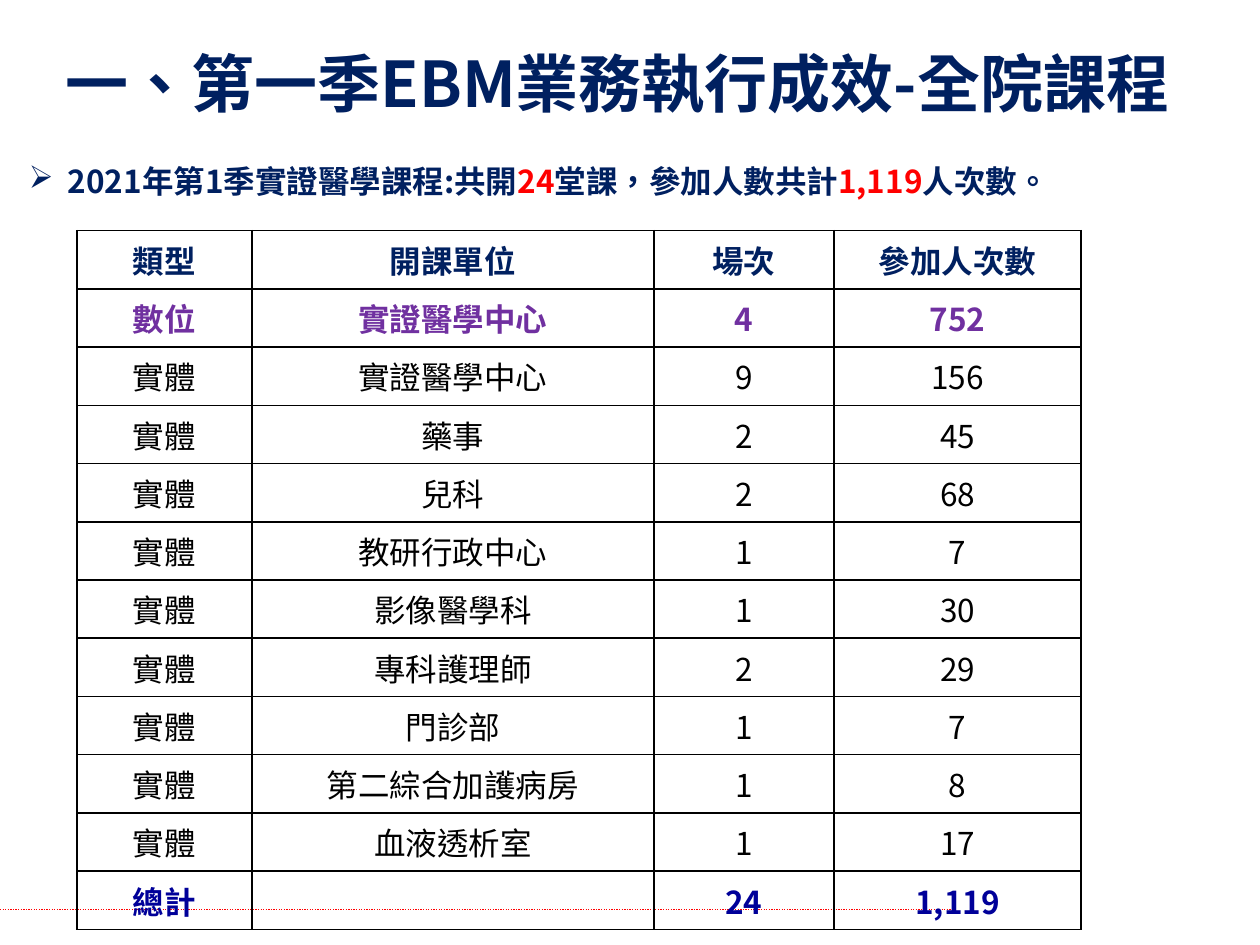
import pptx
import pptx.dml.color
import pptx.enum.dml
import pptx.enum.lang
import pptx.enum.shapes
import pptx.enum.text
import pptx.oxml.ns
import pptx.util
from lxml import etree
from pptx.util import Inches

FONT = "Noto Sans CJK SC"
COLORS = {
    "navy": "002060",
    "red": "FF0000",
    "purple": "7030A0",
    "black": "000000",
    "blue": "000099",
}
TITLE = "一、第一季EBM業務執行成效-全院課程"
SUMMARY = [
    ("2021年第1季實證醫學課程:共開", "navy"),
    ("24", "red"),
    ("堂課，參加人數共計", "navy"),
    ("1,119", "red"),
    ("人次數。", "navy"),
]
COLUMN_WIDTHS = [1.39, 3.19, 1.43, 1.96]
TABLE_HEIGHT = 5.55
COURSES = [
    ("類型", "開課單位", "場次", "參加人次數"),
    ("數位", "實證醫學中心", "4", "752"),
    ("實體", "實證醫學中心", "9", "156"),
    ("實體", "藥事", "2", "45"),
    ("實體", "兒科", "2", "68"),
    ("實體", "教研行政中心", "1", "7"),
    ("實體", "影像醫學科", "1", "30"),
    ("實體", "專科護理師", "2", "29"),
    ("實體", "門診部", "1", "7"),
    ("實體", "第二綜合加護病房", "1", "8"),
    ("實體", "血液透析室", "1", "17"),
    ("總計", "", "24", "1,119"),
]
ROW_COLORS = {0: "navy", 1: "purple", len(COURSES) - 1: "blue"}


def add_child(parent, tag, **attributes):
    return etree.SubElement(parent, pptx.oxml.ns.qn(tag), attributes)


def format_span(span, size, color, bold=True):
    font = span.font
    font.size = pptx.util.Pt(size)
    font.bold = bold
    font.name = FONT
    font.language_id = pptx.enum.lang.MSO_LANGUAGE_ID.TRADITIONAL_CHINESE
    font.color.rgb = pptx.dml.color.RGBColor.from_string(COLORS[color])
    add_child(span._r.get_or_add_rPr(), "a:ea", typeface=FONT)


def set_title(page):
    title = page.shapes.title
    title.left, title.top = Inches(0.42), Inches(0)
    title.width, title.height = Inches(9.58), Inches(1.01)
    frame = title.text_frame
    frame.text = TITLE
    frame.word_wrap = True
    frame.auto_size = pptx.enum.text.MSO_AUTO_SIZE.NONE
    frame.vertical_anchor = pptx.enum.text.MSO_ANCHOR.MIDDLE
    para = frame.paragraphs[0]
    para.alignment = pptx.enum.text.PP_ALIGN.LEFT
    para.line_spacing = 1.5
    format_span(para.runs[0], 36, "navy")


def add_footer_line(page):
    line = page.shapes.add_connector(
        pptx.enum.shapes.MSO_CONNECTOR.STRAIGHT,
        Inches(0), Inches(7.22), Inches(7.59), Inches(7.22))
    line.line.color.rgb = pptx.dml.color.RGBColor.from_string(COLORS["red"])
    line.line.width = pptx.util.Pt(0.75)
    line.line.dash_style = pptx.enum.dml.MSO_LINE.ROUND_DOT
    add_child(line._element.spPr, "a:effectLst")
    line._element.remove(line._element.find(pptx.oxml.ns.qn("p:style")))


def add_summary(page):
    box = page.shapes.add_textbox(Inches(0.13), Inches(1.24), Inches(8.59), Inches(0.4))
    frame = box.text_frame
    frame.word_wrap = True
    frame.auto_size = pptx.enum.text.MSO_AUTO_SIZE.SHAPE_TO_FIT_TEXT
    para = frame.paragraphs[0]
    properties = para._p.get_or_add_pPr()
    properties.set("marL", str(Inches(0.31)))
    properties.set("indent", str(-Inches(0.31)))
    add_child(properties, "a:buFont", typeface="Wingdings", charset="2")
    add_child(properties, "a:buChar", char="Ø")
    for text, color in SUMMARY:
        span = para.add_run()
        span.text = text
        format_span(span, 18, color)


def add_borders(cell):
    properties = cell._tc.get_or_add_tcPr()
    for side in ("a:lnL", "a:lnR", "a:lnT", "a:lnB"):
        border = add_child(properties, side, w=str(pptx.util.Pt(1)))
        fill = add_child(border, "a:solidFill")
        add_child(fill, "a:srgbClr", val=COLORS["black"])


def fill_cell(cell, text, color, bold):
    add_borders(cell)
    cell.fill.background()
    para = cell.text_frame.paragraphs[0]
    para.alignment = pptx.enum.text.PP_ALIGN.CENTER
    if text:
        para.text = text
        format_span(para.runs[0], 18, color, bold)


def add_course_table(page):
    table = page.shapes.add_table(
        len(COURSES), len(COLUMN_WIDTHS), Inches(0.61), Inches(1.83),
        Inches(sum(COLUMN_WIDTHS)), Inches(TABLE_HEIGHT)).table
    table.first_row = False
    table.horz_banding = False
    for column, width in zip(table.columns, COLUMN_WIDTHS):
        column.width = Inches(width)
    for index, course in enumerate(COURSES):
        table.rows[index].height = Inches(TABLE_HEIGHT / len(COURSES))
        color = ROW_COLORS.get(index, "black")
        for position, text in enumerate(course):
            fill_cell(table.cell(index, position), text, color, index in ROW_COLORS)


def main():
    deck = pptx.Presentation()
    deck.slide_width, deck.slide_height = Inches(10), Inches(7.5)
    page = deck.slides.add_slide(deck.slide_layouts[5])
    add_footer_line(page)
    add_summary(page)
    set_title(page)
    add_course_table(page)
    deck.save("out.pptx")


if __name__ == "__main__":
    main()
